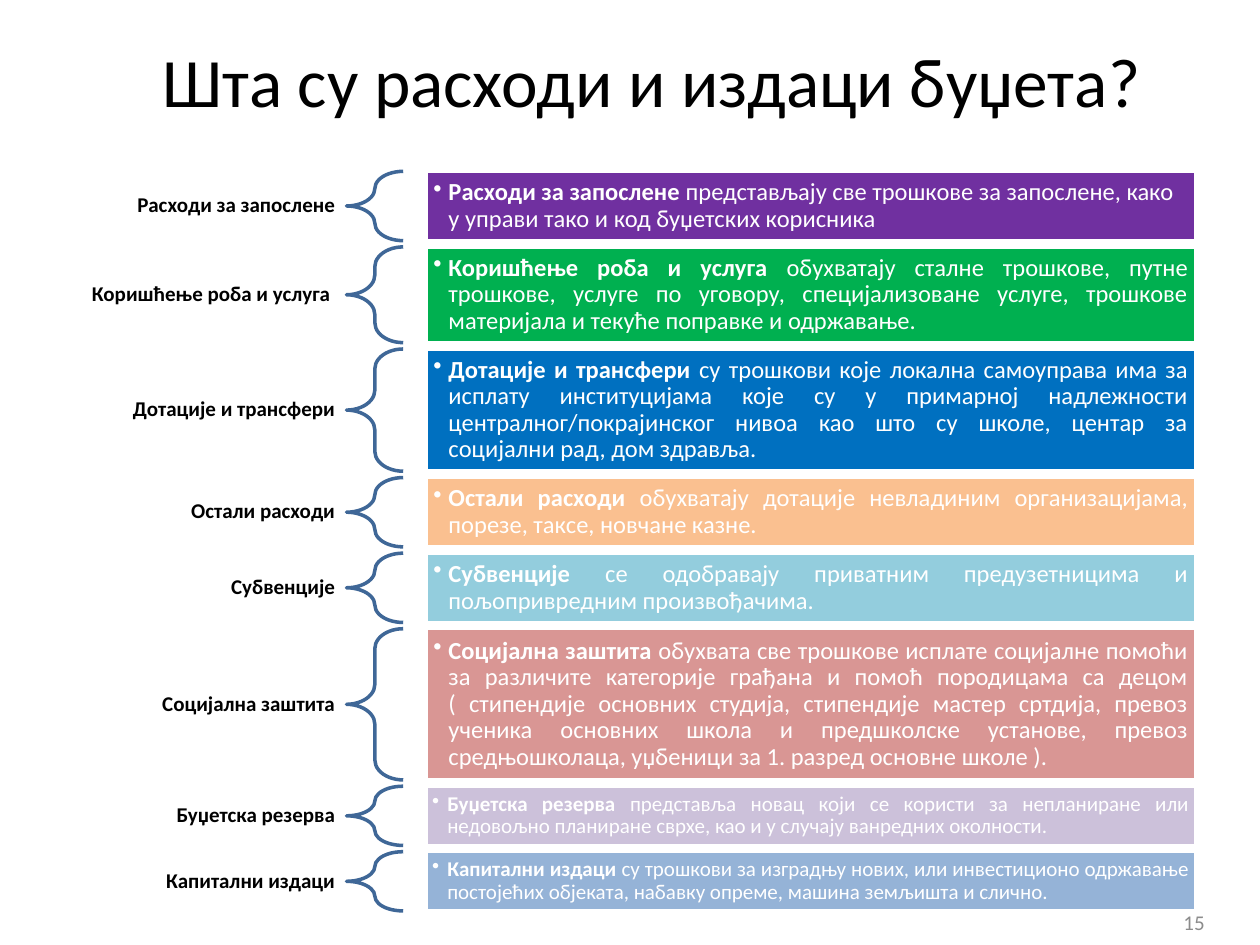
from lxml.etree import SubElement
from pptx import Presentation
from pptx.dml.color import RGBColor
from pptx.enum.shapes import MSO_SHAPE
from pptx.enum.text import MSO_ANCHOR, PP_ALIGN
from pptx.oxml.ns import qn
from pptx.util import Inches, Pt

WIDTH, HEIGHT = 10, 7.5
ROW_GAP = 0.05
LABEL_HEIGHT = 0.26
# Columns of a row, as (start, width) shares of its width
LABEL_COLUMN, BRACE_COLUMN, BAR_COLUMN = (0, 0.25), (0.25, 0.05), (0.32, 0.679)

# Label, bold lead, explanation, fill, row height, text size
ROWS = [
    ("Расходи за запослене", "Расходи за запослене ",
     "представљају све трошкове за запослене, како у управи тако и код буџетских корисника",
     "7030A0", 0.55, 14),
    ("Коришћење роба и услуга ", "Коришћење роба и услуга ",
     "обухватају сталне трошкове, путне трошкове, услуге по уговору, специјализоване услуге, "
     "трошкове материјала и текуће поправке и одржавање.",
     "00B050", 0.76, 14),
    ("Дотације и трансфери", "Дотације и трансфери ",
     "су трошкови које локална самоуправа има за исплату институцијама које су у примарној "
     "надлежности централног/покрајинског нивоа као што су школе, центар за социјални рад, "
     "дом здравља. ",
     "0070C0", 0.97, 14),
    ("Остали расходи", "Остали расходи ",
     "обухватају дотације невладиним организацијама, порезе, таксе, новчане казне.",
     "FAC090", 0.55, 14),
    ("Субвенције", "Субвенције",
     " сe одобравају приватним предузетницима и пољопривредним произвођачима. ",
     "93CDDD", 0.55, 14),
    ("Социјална заштита", "Социјална заштита ",
     "обухвата све трошкове исплате социјалне помоћи за различите категорије грађана и помоћ "
     "породицама са децом ( стипендије основних студија, стипендије мастер сртдија, превоз "
     "ученика основних школа и предшколске установе, превоз средњошколаца, уџбеници за "
     "1. разред основне школе ). ",
     "D99694", 1.2, 14),
    ("Буџетска резерва", "Буџетска резерва ",
     "представља новац који се користи за непланиране или недовољно планиране сврхе, као и у "
     "случају ванредних околности.",
     "CCC1DA", 0.47, 12),
    ("Капитални издаци", "Капитални издаци ",
     "су трошкови за изградњу нових, или инвестиционо одржавање постојећих објеката, набавку "
     "опреме, машина земљишта и слично.",
     "95B3D7", 0.47, 12),
]


def color(value):
    return RGBColor.from_string(value)


def inches(box):
    return [Inches(length) for length in box]


def write(shape, spans, size, ink, align, insets=(0.1, 0.05)):
    """Fill a shape with one paragraph of (text, bold) spans."""
    frame = shape.text_frame
    frame.word_wrap = True
    frame.vertical_anchor = MSO_ANCHOR.MIDDLE
    frame.margin_left = frame.margin_right = Inches(insets[0])
    frame.margin_top = frame.margin_bottom = Inches(insets[1])
    para = frame.paragraphs[0]
    para.alignment = align
    para.font.name, para.font.size = "Calibri", Pt(size)
    para.font.color.rgb = color(ink)
    for text, bold in spans:
        span = para.add_run()
        span.text = text
        span.font.bold = bold
        # Serbian letter forms
        span._r.get_or_add_rPr().set("lang", "sr-Cyrl-RS")
    return para


def add_text(page, box, *details, **options):
    return write(page.shapes.add_textbox(*inches(box)), *details, **options)


def add_outlined(page, kind, box, line):
    shape = page.shapes.add_shape(kind, *inches(box))
    shape.shadow.inherit = False
    shape.line.color.rgb = color(line)
    shape.line.width = Pt(2)
    return shape


def add_bullet(para, indent):
    properties = para._p.get_or_add_pPr()
    properties.set("marL", str(Inches(indent)))
    properties.set("indent", str(-Inches(indent)))
    # The bullet must stand before the default run properties
    bullet = SubElement(properties, qn("a:buChar"), char="•")
    properties.find(qn("a:defRPr")).addprevious(bullet)


def add_row(page, box, label, lead, explanation, fill, size, align):
    left, top, width, height = box

    def column(start, share):
        return left + start * width, top, share * width, height

    # Label, centred on the row
    label_left, _, label_width, _ = column(*LABEL_COLUMN)
    label_box = (label_left, top + (height - LABEL_HEIGHT) / 2, label_width, LABEL_HEIGHT)
    para = add_text(page, label_box, [(label, True)], 12, "000000", PP_ALIGN.RIGHT,
                    insets=(0.09, 0.03))
    para.line_spacing = 0.9

    # Brace
    brace = add_outlined(page, MSO_SHAPE.LEFT_BRACE, column(*BRACE_COLUMN), "3F6797")
    brace.adjustments[0] = 0.35
    brace.fill.background()

    # Coloured bar with the explanation
    bar = add_outlined(page, MSO_SHAPE.RECTANGLE, column(*BAR_COLUMN), "FFFFFF")
    bar.fill.solid()
    bar.fill.fore_color.rgb = color(fill)
    inset = 0.06 if size == 14 else 0.05
    para = write(bar, [(lead, True), (explanation, False)], size, "FFFFFF", align,
                 insets=(inset, inset))
    para.line_spacing = 0.9
    add_bullet(para, 0.12)


def add_rows(page, box):
    left, top, width = box
    for index, (label, lead, explanation, fill, height, size) in enumerate(ROWS):
        align = PP_ALIGN.JUSTIFY if index else PP_ALIGN.LEFT
        add_row(page, (left, top, width, height), label, lead, explanation, fill, size, align)
        top += height + ROW_GAP


def main():
    deck = Presentation()
    deck.slide_width, deck.slide_height = Inches(WIDTH), Inches(HEIGHT)
    page = deck.slides.add_slide(deck.slide_layouts[6])
    # Title
    add_text(page, (0.67, 0.29, 0.9 * WIDTH, 0.68), [("Шта су расходи и издаци буџета?", False)],
             39.6, "000000", PP_ALIGN.CENTER)
    # Kinds of expenditure
    add_rows(page, (0.05 * WIDTH, 1.36, 0.9 * WIDTH))
    # Page number
    add_text(page, (7.33, 7.12, 2.33, 0.4), [("15", False)], 12, "8C8C8C", PP_ALIGN.RIGHT)
    deck.save("out.pptx")


if __name__ == "__main__":
    main()
